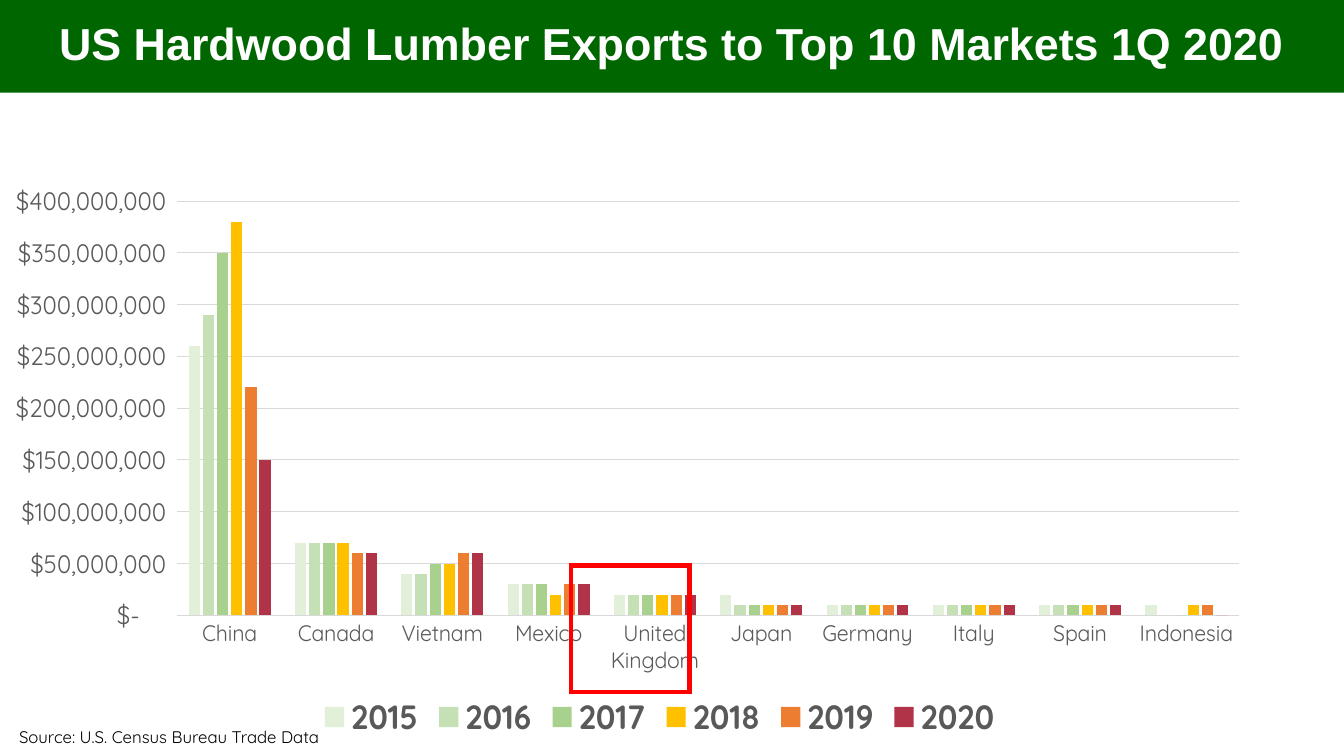
import pptx
import pptx.chart.data
import pptx.dml.color
import pptx.enum.chart
import pptx.enum.shapes
import pptx.enum.text
import pptx.oxml
import pptx.oxml.ns
import pptx.util

Inches = pptx.util.Inches
Pt = pptx.util.Pt
RGBColor = pptx.dml.color.RGBColor
Align = pptx.enum.text.PP_ALIGN
Anchor = pptx.enum.text.MSO_ANCHOR
Tick = pptx.enum.chart.XL_TICK_MARK

GREEN = RGBColor(0x00, 0x66, 0x00)
WHITE = RGBColor(0xFF, 0xFF, 0xFF)
BLACK = RGBColor(0x00, 0x00, 0x00)
RED = RGBColor(0xFF, 0x00, 0x00)
GRAY = RGBColor(0x59, 0x59, 0x59)
PALE = RGBColor(0xD9, 0xD9, 0xD9)
BARS = {
    "2015": RGBColor(0xE2, 0xF0, 0xD9),
    "2016": RGBColor(0xC5, 0xE0, 0xB4),
    "2017": RGBColor(0xA9, 0xD1, 0x8E),
    "2018": RGBColor(0xFF, 0xC0, 0x00),
    "2019": RGBColor(0xED, 0x7D, 0x31),
    "2020": RGBColor(0xB0, 0x33, 0x47),
}
MILLION = 1_000_000
SALES = {
    "China": (260, 290, 350, 380, 220, 150),
    "Canada": (70, 70, 70, 70, 60, 60),
    "Vietnam": (40, 40, 50, 50, 60, 60),
    "Mexico": (30, 30, 30, 20, 30, 30),
    "United Kingdom": (20, 20, 20, 20, 20, 20),
    "Japan": (20, 10, 10, 10, 10, 10),
    "Germany": (10, 10, 10, 10, 10, 10),
    "Italy": (10, 10, 10, 10, 10, 10),
    "Spain": (10, 10, 10, 10, 10, 10),
    "Indonesia": (10, 0, 0, 10, 10, 0),
}
DOLLARS = '_("$"* #,##0_);_("$"* \\(#,##0\\);_("$"* "-"??_);_(@_)'
PLOT = {"x": 0.091, "y": 0.202, "w": 0.9, "h": 0.608}


def set_font(font, size, color, name="Quicksand", bold=False):
    """Give a font its size, colour, face and weight."""
    font.size = Pt(size)
    font.color.rgb = color
    font.name = name
    font.bold = bold


def add_text(frame, text, align=Align.LEFT, anchor=Anchor.TOP, wrap=True, space=1.0, **style):
    """Write one formatted paragraph into a text frame."""
    frame.word_wrap = wrap
    frame.vertical_anchor = anchor
    line = frame.paragraphs[0]
    line.alignment = align
    line.line_spacing = space
    run = line.add_run()
    run.text = text
    set_font(run.font, **style)


def add_rect(slide, box):
    """Place a rectangle without shadow or outline."""
    rect = slide.shapes.add_shape(pptx.enum.shapes.MSO_SHAPE.RECTANGLE, *box)
    rect.shadow.inherit = False
    rect.line.fill.background()
    return rect


def set_plot(chart):
    """Fix the inner plot area as shares of the chart."""
    area = chart._chartSpace.chart.plotArea
    for old in area.findall(pptx.oxml.ns.qn("c:layout")):
        area.remove(old)
    marks = {"layoutTarget": "inner", "xMode": "edge", "yMode": "edge", **PLOT}
    parts = "".join(f'<c:{tag} val="{val}"/>' for tag, val in marks.items())
    area.insert(0, pptx.oxml.parse_xml(
        f'<c:layout {pptx.oxml.ns.nsdecls("c")}>'
        f"<c:manualLayout>{parts}</c:manualLayout></c:layout>"))


def set_axes(chart):
    """Format the market and dollar axes."""
    market, dollar = chart.category_axis, chart.value_axis
    for axis, size in ((market, 16), (dollar, 18)):
        axis.major_tick_mark = axis.minor_tick_mark = Tick.NONE
        set_font(axis.tick_labels.font, size, GRAY)
    dollar.minimum_scale = 0
    dollar.maximum_scale = 400 * MILLION
    dollar.major_unit = 50 * MILLION
    dollar.tick_labels.number_format = DOLLARS
    dollar.tick_labels.number_format_is_linked = False
    dollar.format.line.fill.background()
    dollar.has_major_gridlines = True
    for line in (market.format.line, dollar.major_gridlines.format.line):
        line.color.rgb = PALE
        line.width = Pt(0.75)


def add_sales(slide, box):
    """Chart the exports by market and year."""
    data = pptx.chart.data.CategoryChartData()
    data.categories = list(SALES)
    for year, row in zip(BARS, zip(*SALES.values())):
        data.add_series(year, [val * MILLION for val in row])
    kind = pptx.enum.chart.XL_CHART_TYPE.COLUMN_CLUSTERED
    chart = slide.shapes.add_chart(kind, *box, data).chart
    chart.has_title = False
    set_font(chart.font, 12, BLACK)
    plot = chart.plots[0]
    plot.vary_by_categories = False
    plot.gap_width = 219
    plot.overlap = -27
    for series in plot.series:
        series.format.fill.solid()
        series.format.fill.fore_color.rgb = BARS[series.name]
    set_axes(chart)
    set_plot(chart)
    chart.has_legend = True
    chart.legend.position = pptx.enum.chart.XL_LEGEND_POSITION.BOTTOM
    chart.legend.include_in_layout = False
    set_font(chart.legend.font, 24, GRAY, bold=True)


def add_source(slide, box):
    """Place the source line."""
    note = slide.shapes.add_textbox(*box)
    add_text(note.text_frame, "Source: U.S. Census Bureau Trade Data",
             wrap=False, size=12, color=BLACK)


def add_frame(slide, box):
    """Frame one market in red with sharp corners."""
    frame = add_rect(slide, box)
    frame.fill.background()
    frame.line.color.rgb = RED
    frame.line.width = Pt(3)
    edge = frame.line._get_or_add_ln()
    edge.append(pptx.oxml.parse_xml(
        f'<a:miter {pptx.oxml.ns.nsdecls("a")} lim="800000"/>'))


def add_title(slide, box):
    """Place the title on its green band."""
    band = add_rect(slide, box)
    band.fill.solid()
    band.fill.fore_color.rgb = GREEN
    add_text(band.text_frame, "US Hardwood Lumber Exports to Top 10 Markets 1Q 2020",
             align=Align.CENTER, anchor=Anchor.MIDDLE, space=0.9,
             size=32, color=WHITE, name="Arial", bold=True)


def main():
    """Build the slide and save it."""
    deck = pptx.Presentation()
    deck.slide_width, deck.slide_height = Inches(13.33), Inches(7.5)
    slide = deck.slides.add_slide(deck.slide_layouts[6])
    regions = (
        (add_sales, (0.09, 0.63, 12.31, 6.76)),
        (add_source, (0.09, 7.16, 3.18, 0.3)),
        (add_frame, (5.66, 5.61, 1.18, 1.26)),
        (add_title, (0, 0, 13.33, 0.92)),
    )
    for build, box in regions:
        build(slide, [Inches(side) for side in box])
    deck.save("out.pptx")


if __name__ == "__main__":
    main()
